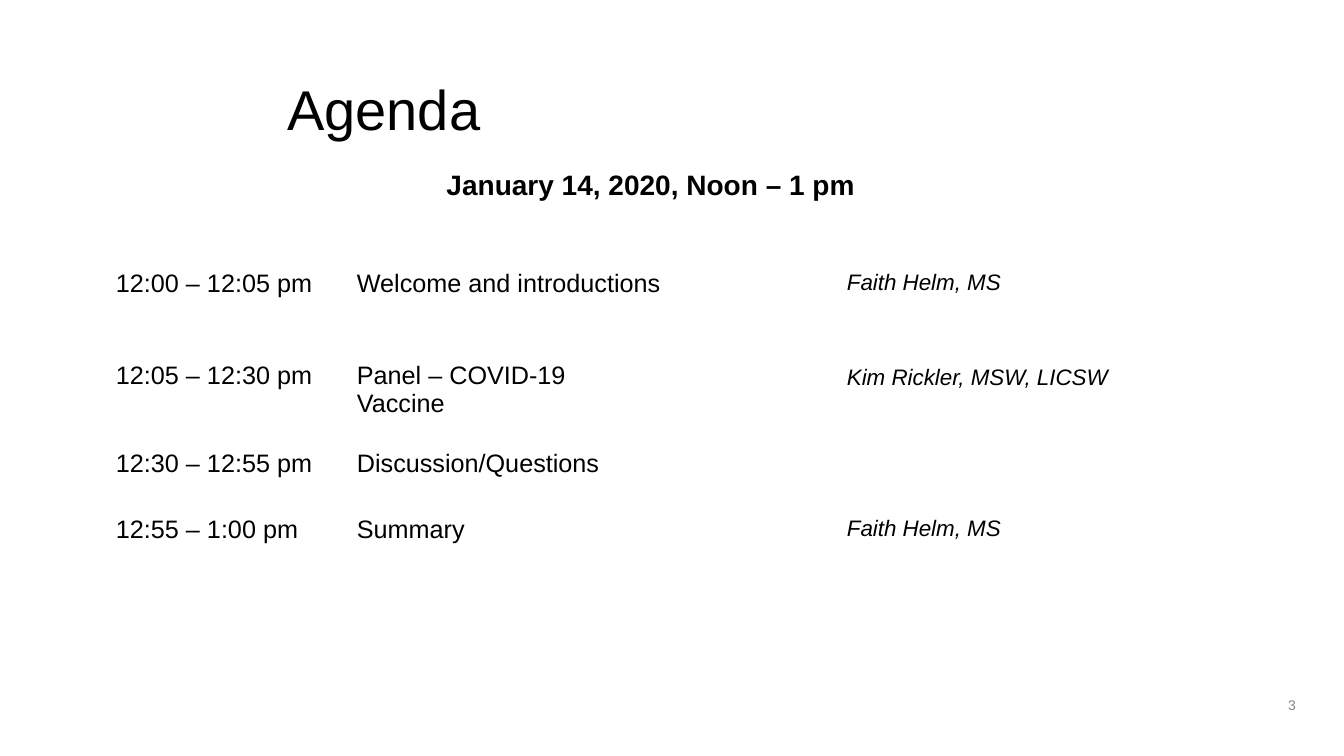
import pptx
from pptx.dml.color import RGBColor
from pptx.enum.text import MSO_ANCHOR, PP_ALIGN
from pptx.util import Inches, Pt

FONT = "Arial"
BLACK, GREY = "000000", "828A8F"

TITLE = "Agenda"
MEETING = "January 14, 2020, Noon – 1 pm"
PAGE_NUMBER = "3"
AGENDA = [
    ("12:00 – 12:05 pm", "Welcome and introductions", "Faith Helm, MS"),
    ("12:05 – 12:30 pm", "Panel – COVID-19\nVaccine", "Kim Rickler, MSW, LICSW"),
    ("12:30 – 12:55 pm", "Discussion/Questions", ""),
    ("12:55 – 1:00 pm", "Summary", "Faith Helm, MS"),
]
TABLE_LEFT, TABLE_TOP = 1.05, 2.63
COLUMN_WIDTHS = [2.39, 4.86, 3.98]
ROW_HEIGHTS = [0.91, 0.87, 0.66, 0.59]
SPEAKER_COLUMN = 2
PANEL_ROW = 1


def style_text(frame, size, color=BLACK, bold=False, italic=False,
               align=PP_ALIGN.LEFT, line_spacing=1.0):
    for para in frame.paragraphs:
        para.alignment = align
        para.line_spacing = line_spacing
        para.font.size = Pt(size)
        for span in para.runs:
            font = span.font
            font.name, font.size = FONT, Pt(size)
            font.bold, font.italic = bold, italic
            font.color.rgb = RGBColor.from_string(color)


def add_text(page, text, left, top, width, height, size,
             anchor=MSO_ANCHOR.MIDDLE, **style):
    box = page.shapes.add_textbox(
        Inches(left), Inches(top), Inches(width), Inches(height))
    frame = box.text_frame
    frame.word_wrap = True
    frame.vertical_anchor = anchor
    frame.text = text
    style_text(frame, size, **style)


def add_agenda(page):
    table = page.shapes.add_table(
        len(AGENDA), len(COLUMN_WIDTHS), Inches(TABLE_LEFT), Inches(TABLE_TOP),
        Inches(sum(COLUMN_WIDTHS)), Inches(sum(ROW_HEIGHTS))).table
    table.first_row = table.horz_banding = False
    for column, width in zip(table.columns, COLUMN_WIDTHS):
        column.width = Inches(width)
    for row_index, (height, entries) in enumerate(zip(ROW_HEIGHTS, AGENDA)):
        table.rows[row_index].height = Inches(height)
        for column_index, text in enumerate(entries):
            cell = table.cell(row_index, column_index)
            cell.fill.background()
            cell.text_frame.text = text
            is_speaker = column_index == SPEAKER_COLUMN
            is_panel_speaker = is_speaker and row_index == PANEL_ROW
            style_text(cell.text_frame, 16 if is_speaker else 18, italic=is_speaker,
                       line_spacing=1.15 if is_panel_speaker else 1.0)


def main():
    deck = pptx.Presentation()
    deck.slide_width, deck.slide_height = Inches(13.33), Inches(7.5)
    page = deck.slides.add_slide(deck.slide_layouts[6])
    add_text(page, TITLE, 2.75, 0.5, 10.17, 1.26, 40, line_spacing=0.8)
    add_text(page, PAGE_NUMBER, 12.61, 6.84, 0.41, 0.3, 10,
             color=GREY, align=PP_ALIGN.CENTER)
    add_text(page, MEETING, 3.17, 1.58, 6.57, 0.47, 20, anchor=MSO_ANCHOR.TOP,
             bold=True, align=PP_ALIGN.CENTER, line_spacing=1.1)
    add_agenda(page)
    deck.save("out.pptx")


if __name__ == "__main__":
    main()
